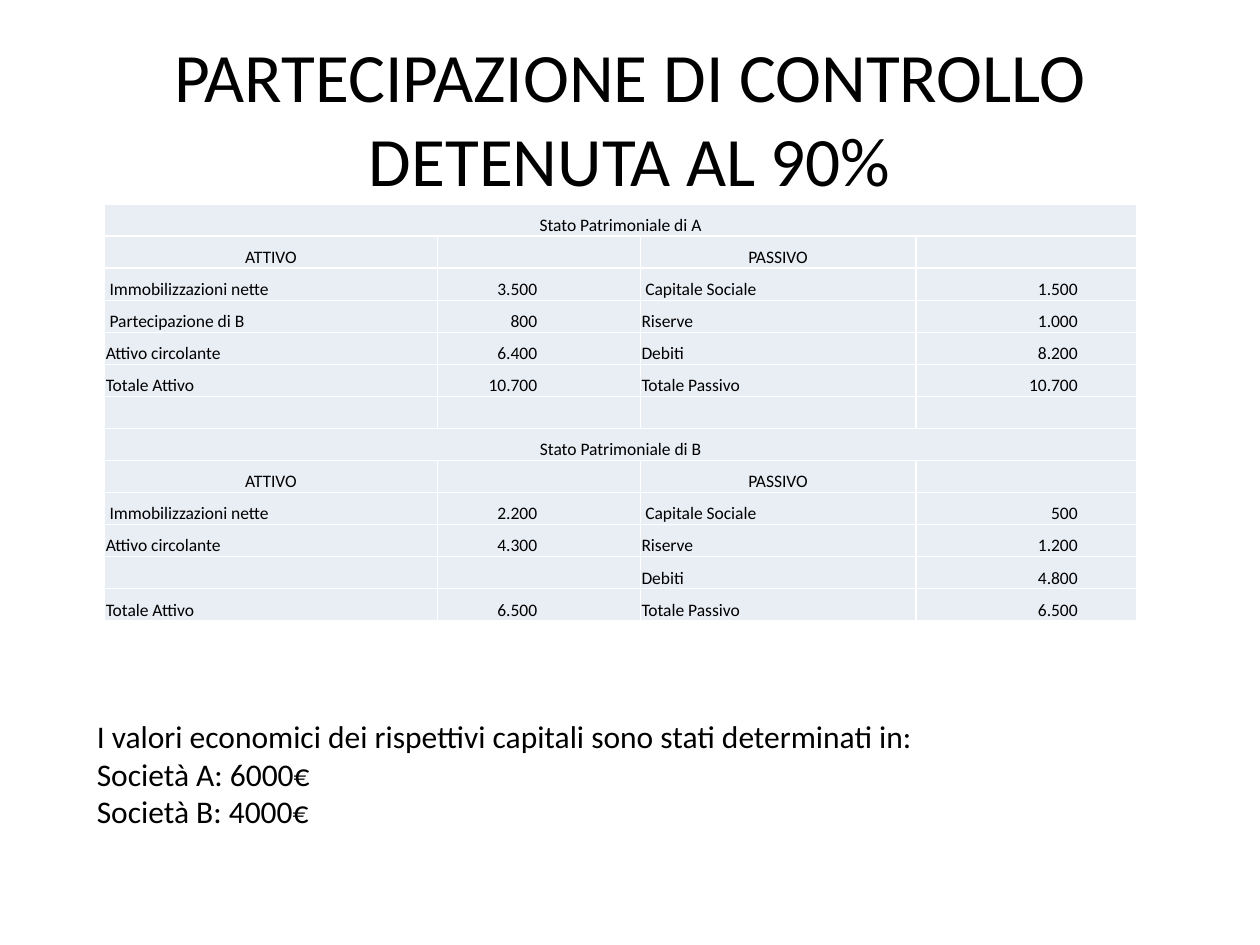
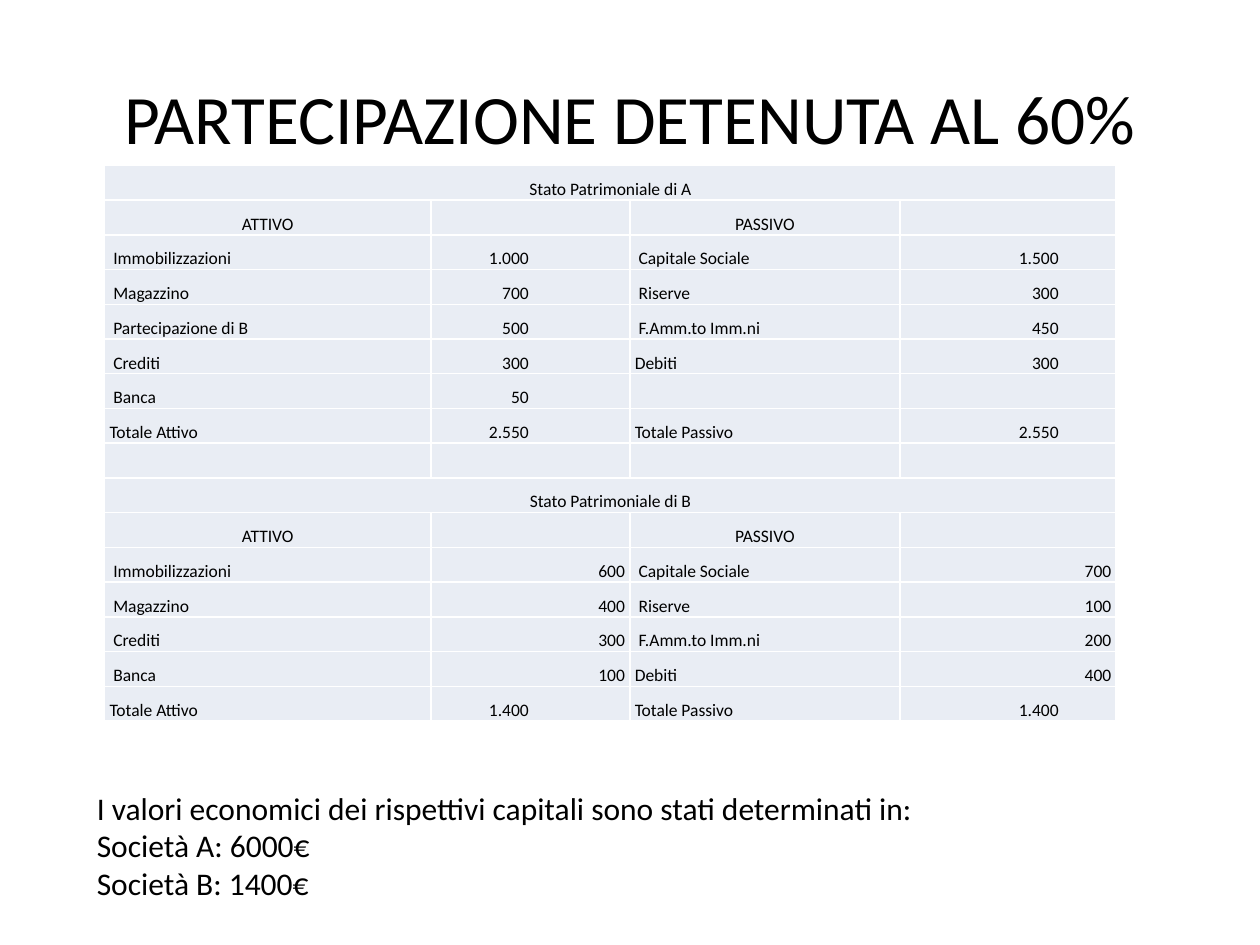
from dataclasses import dataclass

from lxml import etree
from pptx import Presentation, util as u
from pptx.dml import color
from pptx.enum import text
from pptx.oxml import ns


@dataclass(frozen=True)
class Theme:
    font: str = "Calibri"
    ink: str = "000000"
    cell: str = "E9EDF4"
    rule: str = "FFFFFF"
    title_size: float = 39.6
    note_size: float = 18
    table_size: float = 10
    rule_width: float = 1


@dataclass(frozen=True)
class Box:
    left: float
    top: float
    width: float
    height: float

    def lengths(self):
        return [u.Inches(n) for n in (self.left, self.top, self.width, self.height)]


@dataclass(frozen=True)
class Statement:
    company: str
    rows: list
    amounts_at_edge: bool = False


THEME = Theme()
WIDTH, HEIGHT = 10, 7.5
COLUMN_SHARES = (0.32, 0.2, 0.27, 0.21)
COLUMN_SHARES = (0.3225, 0.1967, 0.267, 0.2138)
AMOUNT_GAPS = {1: 0.1, 3: 0.057}
INSET, INDENT, EDGE_GAP = 0.01, 0.03, 0.04
HEADINGS = ("ATTIVO", "", "PASSIVO", "")
CENTER, RIGHT, LEFT = text.PP_ALIGN.CENTER, text.PP_ALIGN.RIGHT, text.PP_ALIGN.LEFT


def share_box(left, top, width, height):
    return Box(left * WIDTH, top * HEIGHT, width * WIDTH, height * HEIGHT)


def add_run(paragraph, words, size):
    run = paragraph.add_run()
    run.text = words
    run.font.name = THEME.font
    run.font.size = u.Pt(size)
    run.font.color.rgb = color.RGBColor.from_string(THEME.ink)


def add_text(slide, box, lines, size, align=LEFT, anchor=text.MSO_ANCHOR.TOP):
    frame = slide.shapes.add_textbox(*box.lengths()).text_frame
    frame.word_wrap = True
    frame.vertical_anchor = anchor
    for index, line in enumerate(lines):
        paragraph = frame.add_paragraph() if index else frame.paragraphs[0]
        paragraph.alignment = align
        add_run(paragraph, line, size)


def draw_borders(cell):
    properties = cell._tc.get_or_add_tcPr()
    for side in ("L", "R", "T", "B"):
        line = etree.SubElement(properties, ns.qn(f"a:ln{side}"), w=str(u.Pt(THEME.rule_width)))
        fill = etree.SubElement(line, ns.qn("a:solidFill"))
        etree.SubElement(fill, ns.qn("a:srgbClr"), val=THEME.rule)


def fill_cell(cell, words="", align=LEFT, left=INSET, right=INSET):
    draw_borders(cell)
    cell.fill.solid()
    cell.fill.fore_color.rgb = color.RGBColor.from_string(THEME.cell)
    cell.vertical_anchor = text.MSO_ANCHOR.BOTTOM
    cell.margin_left, cell.margin_right = u.Inches(left), u.Inches(right)
    cell.margin_top, cell.margin_bottom = u.Inches(INSET), 0
    paragraph = cell.text_frame.paragraphs[0]
    paragraph.alignment = align
    if words:
        add_run(paragraph, words, THEME.table_size)
    else:
        etree.SubElement(paragraph._p, ns.qn("a:endParaRPr"), sz=str(THEME.table_size * 100))


def fill_entry(cells, row, statement, table_width, flush_labels, base_indent):
    at_edge = statement.amounts_at_edge and not row[0].startswith("Totale")
    for column, words in enumerate(row):
        if column in AMOUNT_GAPS:
            gap = EDGE_GAP if at_edge else AMOUNT_GAPS[column] * table_width
            fill_cell(cells[column], words, RIGHT, right=gap)
        else:
            steps = base_indent + (not words.startswith(flush_labels))
            fill_cell(cells[column], words, left=INSET + INDENT * steps)


def add_balance_sheets(slide, box, statements, flush_labels, base_indent):
    row_count = sum(len(s.rows) + 2 for s in statements) + len(statements) - 1
    table = slide.shapes.add_table(row_count, len(COLUMN_SHARES), *box.lengths()).table
    table.first_row = table.horz_banding = False
    for column, share in zip(table.columns, COLUMN_SHARES):
        column.width = u.Inches(box.width * share)
    for row in table.rows:
        row.height = u.Inches(box.height / row_count)
    grid = iter([list(row.cells) for row in table.rows])
    for index, statement in enumerate(statements):
        if index:
            for cell in next(grid):
                fill_cell(cell)
        caption = next(grid)
        for column, cell in enumerate(caption):
            fill_cell(cell, "" if column else f"Stato Patrimoniale di {statement.company}", CENTER)
        caption[0].merge(caption[-1])
        for cell, heading in zip(next(grid), HEADINGS):
            fill_cell(cell, heading, CENTER)
        for row in statement.rows:
            fill_entry(next(grid), row, statement, box.width, flush_labels, base_indent)


def add_holding_slide(presentation, title, table_box, statements, flush_labels,
                      base_indent, note_top, values):
    slide = presentation.slides.add_slide(presentation.slide_layouts[6])
    add_text(slide, share_box(0.05, 0.04, 0.9, 0.167), [title], THEME.title_size,
             CENTER, text.MSO_ANCHOR.MIDDLE)
    add_balance_sheets(slide, table_box, statements, flush_labels, base_indent)
    note = ["I valori economici dei rispettivi capitali sono stati determinati in:"]
    note += [f"Società {s.company}: {value}€" for s, value in zip(statements, values)]
    add_text(slide, share_box(0.067, note_top, 0.85, 0.135), note, THEME.note_size)


CONTROL_STATEMENTS = [
    Statement("A", [
        ("Immobilizzazioni nette", "3.500", "Capitale Sociale", "1.500"),
        ("Partecipazione di B", "800", "Riserve", "1.000"),
        ("Attivo circolante", "6.400", "Debiti", "8.200"),
        ("Totale Attivo", "10.700", "Totale Passivo", "10.700"),
    ]),
    Statement("B", [
        ("Immobilizzazioni nette", "2.200", "Capitale Sociale", "500"),
        ("Attivo circolante", "4.300", "Riserve", "1.200"),
        ("", "", "Debiti", "4.800"),
        ("Totale Attivo", "6.500", "Totale Passivo", "6.500"),
    ]),
]

MAJORITY_STATEMENTS = [
    Statement("A", [
        ("Immobilizzazioni", "1.000", "Capitale Sociale", "1.500"),
        ("Magazzino", "700", "Riserve", "300"),
        ("Partecipazione di B", "500", "F.Amm.to Imm.ni", "450"),
        ("Crediti", "300", "Debiti", "300"),
        ("Banca", "50", "", ""),
        ("Totale Attivo", "2.550", "Totale Passivo", "2.550"),
    ]),
    Statement("B", [
        ("Immobilizzazioni", "600", "Capitale Sociale", "700"),
        ("Magazzino", "400", "Riserve", "100"),
        ("Crediti", "300", "F.Amm.to Imm.ni", "200"),
        ("Banca", "100", "Debiti", "400"),
        ("Totale Attivo", "1.400", "Totale Passivo", "1.400"),
    ], amounts_at_edge=True),
]


def main():
    presentation = Presentation()
    presentation.slide_width, presentation.slide_height = u.Inches(WIDTH), u.Inches(HEIGHT)
    add_holding_slide(presentation, "PARTECIPAZIONE DI CONTROLLO DETENUTA AL 90%",
                      share_box(0.083, 0.216, 0.819, 0.441), CONTROL_STATEMENTS,
                      ("Totale", "Debiti", "Riserve", "Attivo circolante"), 0,
                      0.752, (6000, 4000))
    add_holding_slide(presentation, "PARTECIPAZIONE DETENUTA AL 60%",
                      share_box(0.083, 0.175, 0.803, 0.588), MAJORITY_STATEMENTS,
                      ("Totale", "Debiti"), 1, 0.828, (6000, 1400))
    presentation.save("out.pptx")


if __name__ == "__main__":
    main()
